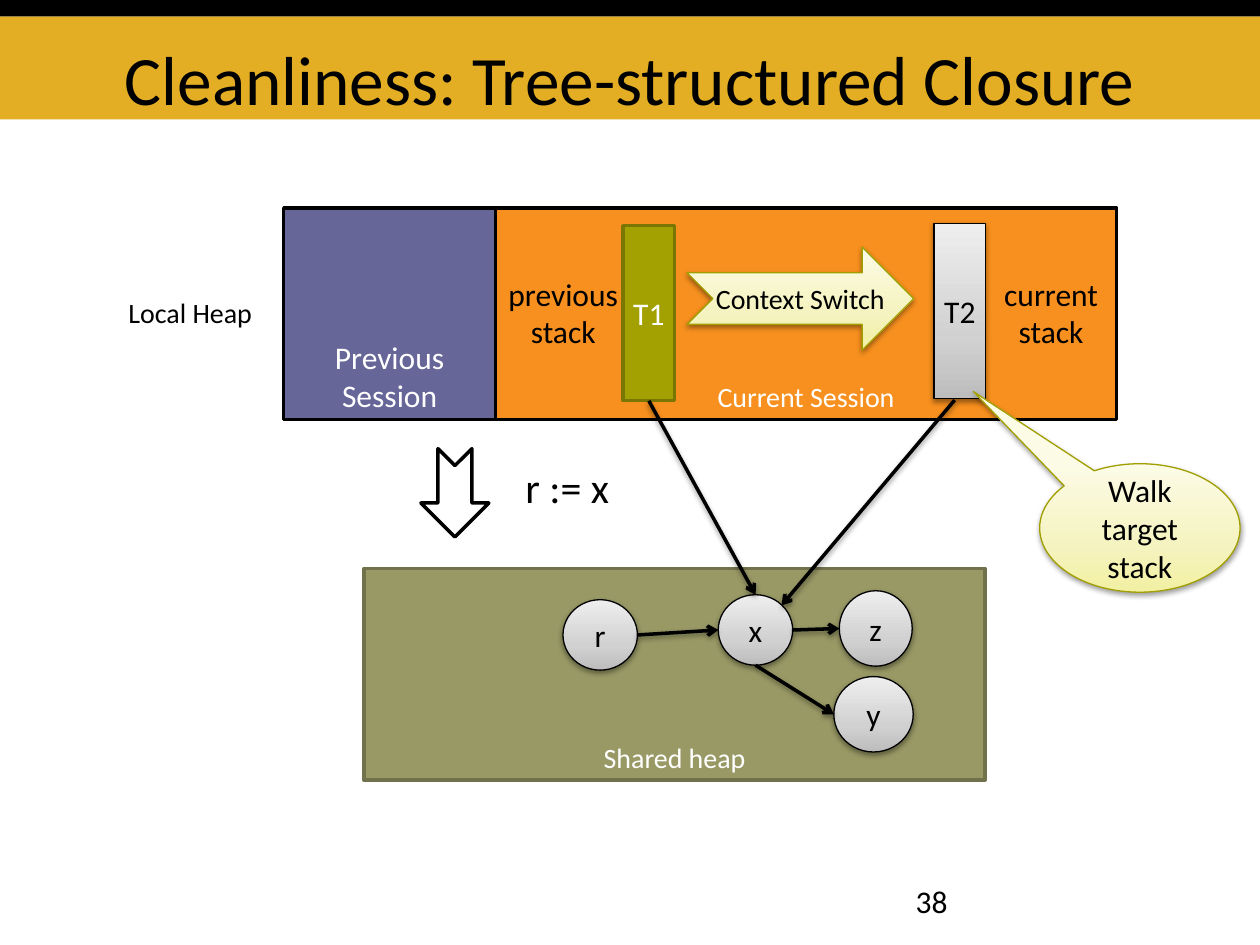
from dataclasses import dataclass

from lxml.etree import SubElement
from pptx import Presentation
from pptx.dml.color import RGBColor
from pptx.enum.shapes import MSO_CONNECTOR, MSO_SHAPE as Shape
from pptx.enum.text import MSO_ANCHOR as Anchor, MSO_AUTO_SIZE, PP_ALIGN as Align
from pptx.oxml.ns import qn
from pptx.util import Cm, Pt


@dataclass(frozen=True)
class Theme:
    font: str = "Calibri"
    black: str = "000000"
    white: str = "FFFFFF"
    gold: str = "E3AE24"
    purple: str = "666699"
    orange: str = "F7901E"
    olive: str = "999966"
    olive_edge: str = "71714B"
    green: str = "A3A101"
    green_edge: str = "797701"
    cream_edge: str = "A09E00"
    gray: tuple = ((0, "BDBDBD"), (35, "D1D1D1"), (100, "EEEEEE"))
    cream: tuple = ((0, "F2F0A2"), (35, "F5F3BF"), (100, "FCFBE6"))
    title: float = 39.6
    operation: float = 24
    body: float = 18
    small: float = 16
    thick: float = 2
    thin: float = 0.75


@dataclass(frozen=True)
class Box:
    """A region in centimetres."""
    left: float
    top: float
    width: float
    height: float

    def inner(self, left, top, width, height):
        return Box(self.left + left, self.top + top, width, height)

    def lengths(self):
        return [Cm(n) for n in (self.left, self.top, self.width, self.height)]


THEME = Theme()


# Shared helpers
def color(value):
    return RGBColor.from_string(value)


def set_shadow(shape, visible):
    effects = SubElement(shape._element.spPr, qn("a:effectLst"))
    if visible:
        shadow = SubElement(effects, qn("a:outerShdw"), blurRad=str(Pt(3.1)),
                            dist=str(Pt(1.6)), dir="5400000", rotWithShape="0")
        tint = SubElement(shadow, qn("a:srgbClr"), val=THEME.black)
        SubElement(tint, qn("a:alpha"), val="38000")


def set_gradient(shape, stops):
    shape.fill.gradient()
    shape.fill.gradient_angle = 90
    stop_list = shape._element.spPr.find(qn("a:gradFill")).find(qn("a:gsLst"))
    for stop in list(stop_list):
        stop_list.remove(stop)
    for percent, value in stops:
        stop = SubElement(stop_list, qn("a:gs"), pos=str(percent * 1000))
        SubElement(stop, qn("a:srgbClr"), val=value)


def set_text(frame, text, size, ink, align=Align.CENTER):
    frame.text = text
    for para in frame.paragraphs:
        para.alignment = align
        for span in para.runs:
            span.font.name = THEME.font
            span.font.size = Pt(size)
            span.font.color.rgb = color(ink)


def set_margins(frame, side, end):
    frame.margin_left = frame.margin_right = Cm(side)
    frame.margin_top = frame.margin_bottom = Cm(end)


def add_label(page, box, text, size, align=Align.LEFT):
    label = page.shapes.add_textbox(*box.lengths())
    set_text(label.text_frame, text, size, THEME.black, align)
    return label


def add_block(page, kind, box, fill, edge=None, weight=THEME.thick):
    """Flat colour, or a shadowed gradient when fill holds stops."""
    block = page.shapes.add_shape(kind, *box.lengths())
    is_gradient = isinstance(fill, tuple)
    if is_gradient:
        set_gradient(block, fill)
    else:
        block.fill.solid()
        block.fill.fore_color.rgb = color(fill)
    if edge:
        block.line.color.rgb = color(edge)
        block.line.width = Pt(weight)
    else:
        block.line.fill.background()
    set_shadow(block, is_gradient)
    return block


def add_area(page, box, fill, edge, text, size):
    area = add_block(page, Shape.RECTANGLE, box, fill, edge)
    area.text_frame.word_wrap = True
    area.text_frame.vertical_anchor = Anchor.BOTTOM
    set_text(area.text_frame, text, size, THEME.white)


def add_tight(page, kind, box, fill, edge, weight, text, size, ink=THEME.black, end=0.13):
    block = add_block(page, kind, box, fill, edge, weight)
    block.text_frame.word_wrap = True
    set_margins(block.text_frame, 0, end)
    set_text(block.text_frame, text, size, ink)
    return block


def add_arrow(page, source, source_at, target, target_at):
    """Join points given as fractions of each shape's width and height."""
    ends = [int(n) for shape, (x, y) in ((source, source_at), (target, target_at))
            for n in (shape.left + x * shape.width, shape.top + y * shape.height)]
    arrow = page.shapes.add_connector(MSO_CONNECTOR.STRAIGHT, *ends)
    arrow.line.color.rgb = color(THEME.black)
    arrow.line.width = Pt(THEME.thick)
    SubElement(arrow.line._get_or_add_ln(), qn("a:tailEnd"), type="arrow")
    set_shadow(arrow, True)


# Regions
def draw_header(page, box):
    edge = 0.33
    band = box.inner(0, edge, box.width, box.height - edge)
    add_block(page, Shape.RECTANGLE, band, THEME.gold)
    add_block(page, Shape.RECTANGLE, box.inner(0, 0, box.width, edge), THEME.black)
    title = page.shapes.title
    page.shapes._spTree.append(title._element)  # bring in front of the band
    title.left, title.top, title.width, title.height = band.inner(
        1.27, 0, band.width - 2.54, band.height).lengths()
    frame = title.text_frame
    set_text(frame, "Cleanliness: Tree-structured Closure", THEME.title, THEME.black)
    frame.auto_size = MSO_AUTO_SIZE.NONE
    frame.vertical_anchor = Anchor.BOTTOM
    frame.margin_bottom = 0


def draw_local_heap(page, box):
    previous = box.inner(0, 0, box.height, box.height)
    current = box.inner(box.height, 0, box.width - box.height, box.height)
    add_area(page, previous, THEME.purple, THEME.black, "Previous Session", THEME.body)
    add_area(page, current, THEME.orange, THEME.black, "Current Session", THEME.small)
    add_label(page, box.inner(-3.38, 1.65, 3.05, 0.94), "Local Heap", THEME.small)
    for left, width, text in ((-0.02, 2.77, "previous\nstack"), (9.98, 2.44, "current\nstack")):
        add_label(page, current.inner(left, 1.22, width, 1.8), text, THEME.body, Align.CENTER)
    # Thread stacks and the switch between them
    first = add_tight(page, Shape.RECTANGLE, current.inner(2.57, 0.36, 1.04, 3.53), THEME.green,
                      THEME.green_edge, THEME.thick, "T1", THEME.body, THEME.white)
    second = add_tight(page, Shape.RECTANGLE, current.inner(8.84, 0.31, 1.04, 3.53), THEME.gray,
                       THEME.black, THEME.thin, "T2", THEME.body)
    add_tight(page, Shape.NOTCHED_RIGHT_ARROW, current.inner(3.86, 0.79, 4.57, 2.08),
              THEME.cream, THEME.cream_edge, THEME.thin, "Context Switch", THEME.small)
    return first, second


def draw_operation(page, box):
    arrow = add_block(page, Shape.NOTCHED_RIGHT_ARROW, box.inner(0, 0.08, 1.78, 1.37),
                      THEME.white, THEME.black)
    arrow.rotation = 90
    add_label(page, box.inner(2.06, 0, 2.24, box.height), "r := x", THEME.operation)


def draw_shared_heap(page, box):
    add_area(page, box, THEME.olive, THEME.olive_edge, "Shared heap", THEME.small)
    places = {"x": (7.14, 0.53, 1.5, 1.42), "y": (9.47, 2.18, 1.6, 1.52),
              "z": (9.58, 0.45, 1.47, 1.52), "r": (4.01, 0.63, 1.5, 1.42)}
    nodes = {name: add_tight(page, Shape.OVAL, box.inner(*place), THEME.gray, THEME.black,
                             THEME.thin, name, THEME.body, end=0)
             for name, place in places.items()}
    for source, start, target in (("x", (0.5, 1), "y"), ("x", (1, 0.5), "z"), ("r", (1, 0.5), "x")):
        add_arrow(page, nodes[source], start, nodes[target], (0, 0.5))
    return nodes["x"]


def draw_callout(page, box):
    callout = add_tight(page, Shape.OVAL_CALLOUT, box, THEME.cream, THEME.cream_edge,
                        THEME.thin, "Walk target stack", THEME.body, end=0)
    callout.adjustments[0], callout.adjustments[1] = -0.831, -1.062


def main():
    deck = Presentation()
    deck.slide_width, deck.slide_height = Cm(25.4), Cm(19.05)
    page = deck.slides.add_slide(deck.slide_layouts[5])
    draw_header(page, Box(0, 0, 25.4, 2.41))
    shared = draw_shared_heap(page, Box(7.34, 11.46, 12.52, 4.27))
    first, second = draw_local_heap(page, Box(5.72, 4.19, 16.79, 4.27))
    draw_operation(page, Box(8.28, 9.17, 4.3, 1.27))
    # References from both stacks into the shared heap
    add_arrow(page, first, (0.5, 1), shared, (0.5, 0))
    add_arrow(page, second, (0.4, 1.01), shared, (0.85, 0.15))
    draw_callout(page, Box(20.96, 9.35, 4.04, 2.59))
    add_label(page, Box(18.21, 17.65, 5.92, 1.02), "38", THEME.body)
    deck.save("out.pptx")


if __name__ == "__main__":
    main()
